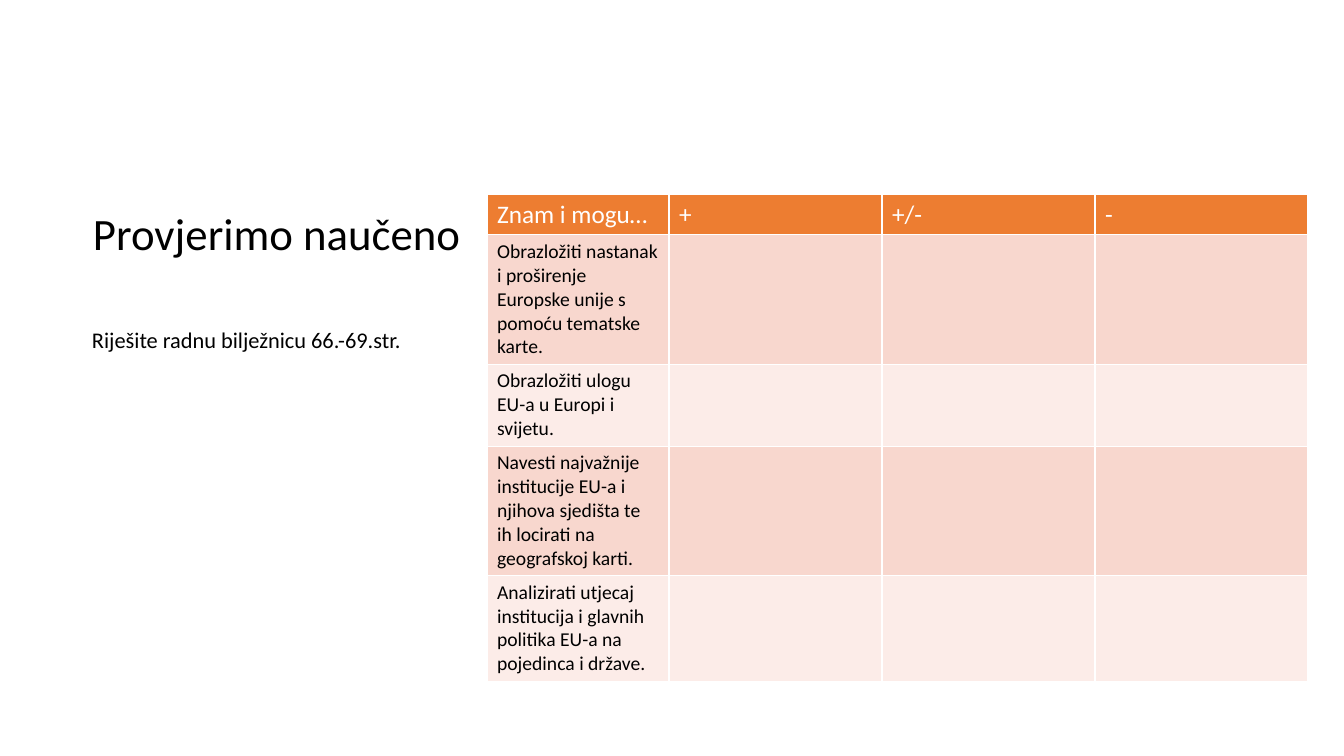
from pptx import Presentation
from pptx import util as u
from pptx.dml.color import RGBColor
from pptx.enum import text

PX = 914400 / 100.8
COLOURS = {
    "ink": "000000",
    "header_text": "FFFFFF",
    "header": "ED7D31",
    "odd_row": "F8D7CE",
    "even_row": "FCECE8",
}


def px(length):
    return u.Emu(round(length * PX))


def style(paragraph, size, colour):
    paragraph.font.name = "Calibri"
    paragraph.font.size = u.Pt(size)
    paragraph.font.bold = False
    paragraph.font.color.rgb = RGBColor.from_string(COLOURS[colour])


prs = Presentation()
prs.slide_width, prs.slide_height = px(1344), px(756)
slide = prs.slides.add_slide(prs.slide_layouts[5])

heading = slide.shapes.title
heading.left, heading.top, heading.width, heading.height = px(93), px(212), px(433), px(188)
task = slide.shapes.add_textbox(px(92), px(329), px(433), px(226))

for box, wording, size in (
    (heading, "Provjerimo naučeno", 32),
    (task, "Riješite radnu bilježnicu 66.-69.str.", 16),
):
    frame = box.text_frame
    frame.text = wording
    frame.word_wrap = True
    frame.auto_size = text.MSO_AUTO_SIZE.NONE
    frame.vertical_anchor = text.MSO_ANCHOR.TOP
    frame.margin_left = frame.margin_top = frame.margin_right = frame.margin_bottom = 0
    paragraph = frame.paragraphs[0]
    paragraph.alignment = text.PP_ALIGN.LEFT
    paragraph.line_spacing = 0.9
    style(paragraph, size, "ink")

checklist_rows = [
    ["Znam i mogu…", "+", "+/-", "-"],
    ["Obrazložiti nastanak i proširenje Europske unije s pomoću tematske karte."],
    ["Obrazložiti ulogu EU-a u Europi i svijetu."],
    ["Navesti najvažnije institucije EU-a i njihova sjedišta te ih locirati na geografskoj karti."],
    ["Analizirati utjecaj institucija i glavnih politika EU-a na pojedinca i države."],
]
column_widths = [182, 213, 213, 213]
row_heights = [40, 129, 82, 129, 105]

checklist = slide.shapes.add_table(
    len(row_heights), len(column_widths),
    px(487), px(194), px(sum(column_widths)), px(sum(row_heights)),
).table

for column, width in zip(checklist.columns, column_widths):
    column.width = px(width)

for index, (row, height, wordings) in enumerate(zip(checklist.rows, row_heights, checklist_rows)):
    row.height = px(height)
    if index == 0:
        fill, size, ink = "header", 18, "header_text"
    else:
        fill, size, ink = ("odd_row" if index % 2 else "even_row"), 14, "ink"
    for cell in row.cells:
        cell.fill.solid()
        cell.fill.fore_color.rgb = RGBColor.from_string(COLOURS[fill])
    for cell, wording in zip(row.cells, wordings):
        cell.text_frame.text = wording
        style(cell.text_frame.paragraphs[0], size, ink)

prs.save("out.pptx")
